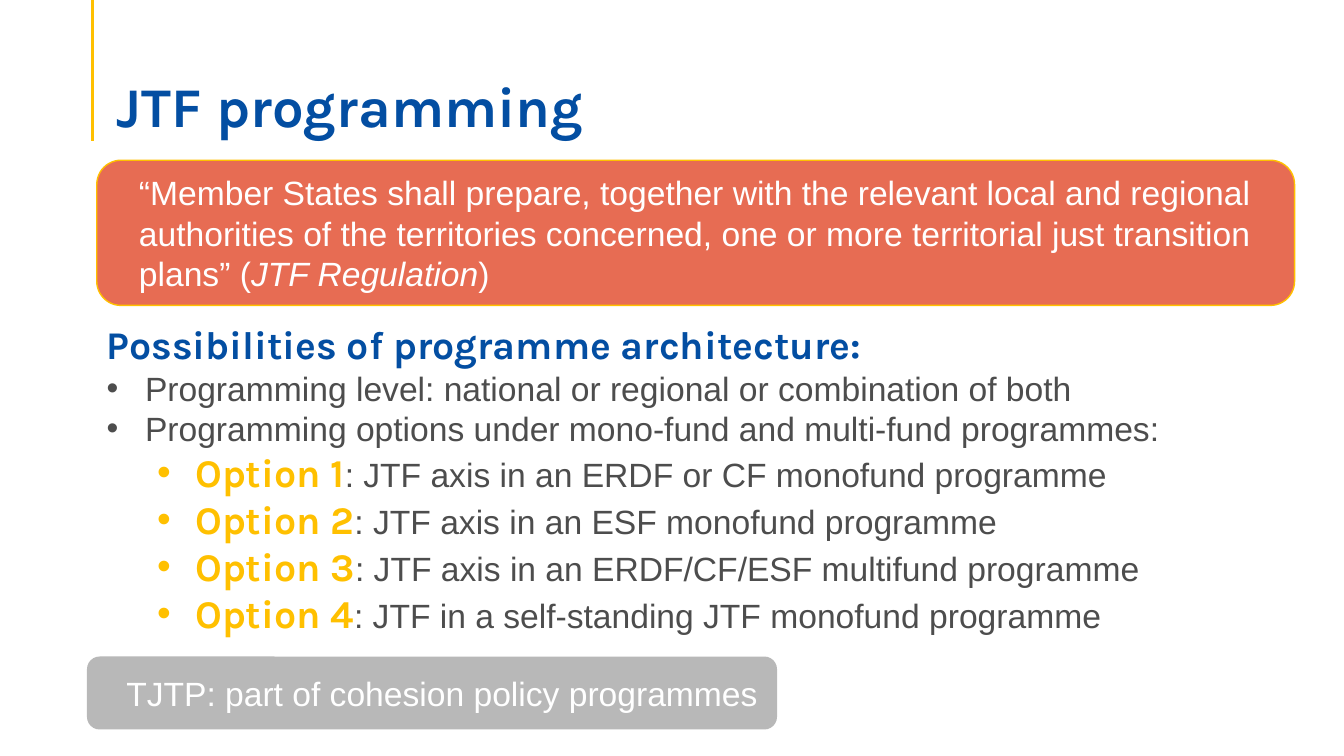
from lxml import etree
from pptx import Presentation
from pptx.dml.color import RGBColor
from pptx.enum.shapes import MSO_CONNECTOR, MSO_SHAPE
from pptx.enum.text import MSO_ANCHOR, PP_ALIGN
from pptx.oxml.ns import qn
from pptx.util import Inches, Pt

STRAIGHT = MSO_CONNECTOR.STRAIGHT
ROUNDED = MSO_SHAPE.ROUNDED_RECTANGLE
TOP, MIDDLE, BOTTOM = MSO_ANCHOR.TOP, MSO_ANCHOR.MIDDLE, MSO_ANCHOR.BOTTOM
LEFT = PP_ALIGN.LEFT

BLUE = RGBColor(0x03, 0x4E, 0xA2)
YELLOW = RGBColor(0xFF, 0xC0, 0x00)
CORAL = RGBColor(0xE7, 0x6C, 0x53)
SILVER = RGBColor(0xB8, 0xB8, 0xB8)
GREY = RGBColor(0x4D, 0x4D, 0x4D)
WHITE = RGBColor(0xFF, 0xFF, 0xFF)

# Text formats
TITLE = {"name": "Karla", "size": Pt(40), "bold": True, "color": BLUE}
HEADING = {**TITLE, "size": Pt(28)}
OPTION = {**HEADING, "color": YELLOW}
BODY = {"name": "Arial", "size": Pt(24), "bold": False, "color": GREY}
CALLOUT = {**BODY, "color": WHITE}
CITATION = {**CALLOUT, "italic": True}


class SlideBuilder:
    """Holds the current slide and its shared style."""

    hanging = 0.38

    def __init__(self, slide):
        self.shapes = slide.shapes

    def rule(self, x, top, bottom, color, width):
        line = self.shapes.add_connector(
            STRAIGHT, Inches(x), Inches(top), Inches(x), Inches(bottom))
        line.line.color.rgb = color
        line.line.width = Pt(width)
        etree.SubElement(line._element.spPr, qn("a:effectLst"))

    def text_box(self, box, paragraphs, anchor=TOP, bottom=0.05, spacing=None):
        area = self.shapes.add_textbox(*map(Inches, box))
        self.fill_text(area.text_frame, paragraphs, anchor, bottom, spacing)

    def callout(self, box, runs, fill, outline):
        panel = self.shapes.add_shape(ROUNDED, *map(Inches, box))
        panel.shadow.inherit = False
        panel.fill.solid()
        panel.fill.fore_color.rgb = fill
        panel.line.color.rgb = outline
        panel.line.width = Pt(1)
        self.fill_text(panel.text_frame, [(runs, 0.25, False)], MIDDLE)

    def fill_text(self, frame, paragraphs, anchor, bottom=0.05, spacing=None):
        frame.word_wrap = True
        frame.vertical_anchor = anchor
        frame.margin_bottom = Inches(bottom)
        for index, (runs, indent, bulleted) in enumerate(paragraphs):
            paragraph = frame.add_paragraph() if index else frame.paragraphs[0]
            paragraph.alignment = LEFT
            paragraph.line_spacing = spacing
            self.indent(paragraph, indent, bulleted)
            for text, style in runs:
                self.add_run(paragraph, text, style)

    def indent(self, paragraph, left, bulleted):
        properties = paragraph._p.get_or_add_pPr()
        properties.set("marL", str(Inches(left)))
        properties.set("indent", str(-Inches(self.hanging) if bulleted else 0))
        if bulleted:
            font = etree.SubElement(properties, qn("a:buFont"))
            font.set("typeface", "Arial")
            etree.SubElement(properties, qn("a:buChar")).set("char", "•")

    def add_run(self, paragraph, text, style):
        run = paragraph.add_run()
        run.text = text
        for key, value in style.items():
            if key == "color":
                run.font.color.rgb = value
            else:
                setattr(run.font, key, value)


def main():
    deck = Presentation()
    deck.slide_width, deck.slide_height = Inches(13.33), Inches(7.5)
    builder = SlideBuilder(deck.slides.add_slide(deck.slide_layouts[6]))

    # Title with its vertical rule
    builder.rule(0.92, 0, 1.4, YELLOW, 2.25)
    builder.text_box((1.06, 0.53, 11.5, 0.86),
                     [([("JTF programming", TITLE)], 0, False)],
                     BOTTOM, bottom=0, spacing=0.9)

    # Quotation from the regulation
    quotation = [
        ("“Member States shall prepare, together with the relevant local and "
         "regional authorities of the territories concerned, one or more "
         "territorial just transition plans” (", CALLOUT),
        ("JTF Regulation", CITATION),
        (")", CALLOUT),
    ]
    builder.callout((0.96, 1.59, 11.88, 1.44), quotation, CORAL, YELLOW)

    # Programme architecture and its numbered options
    points = [
        "Programming level: national or regional or combination of both",
        "Programming options under mono-fund and multi-fund programmes:",
    ]
    options = [
        "JTF axis in an ERDF or CF monofund programme",
        "JTF axis in an ESF monofund programme",
        "JTF axis in an ERDF/CF/ESF multifund programme",
        "JTF in a self-standing JTF monofund programme",
    ]
    architecture = [
        ([("Possibilities of programme architecture:", HEADING)], 0, False)]
    architecture += [([(point, BODY)], 0.38, True) for point in points]
    architecture += [
        ([(f"Option {number}", OPTION), (f": {option}", BODY)], 0.88, True)
        for number, option in enumerate(options, 1)]
    builder.text_box((0.96, 3.13, 11.88, 3.67), architecture)

    # Closing remark
    builder.callout((0.87, 6.52, 6.83, 0.71),
                    [("TJTP: part of cohesion policy programmes", CALLOUT)],
                    SILVER, SILVER)

    deck.save("out.pptx")


if __name__ == "__main__":
    main()
